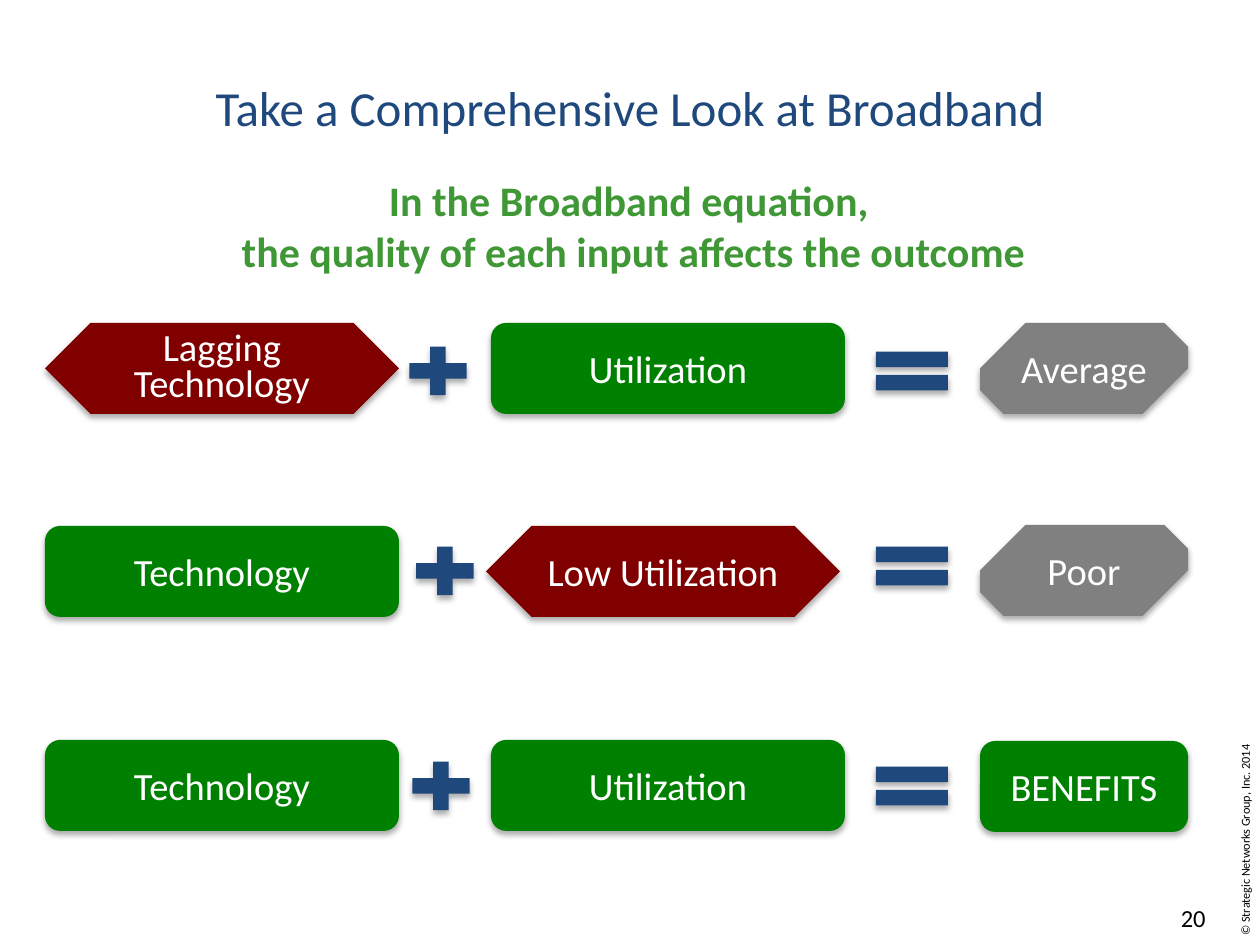
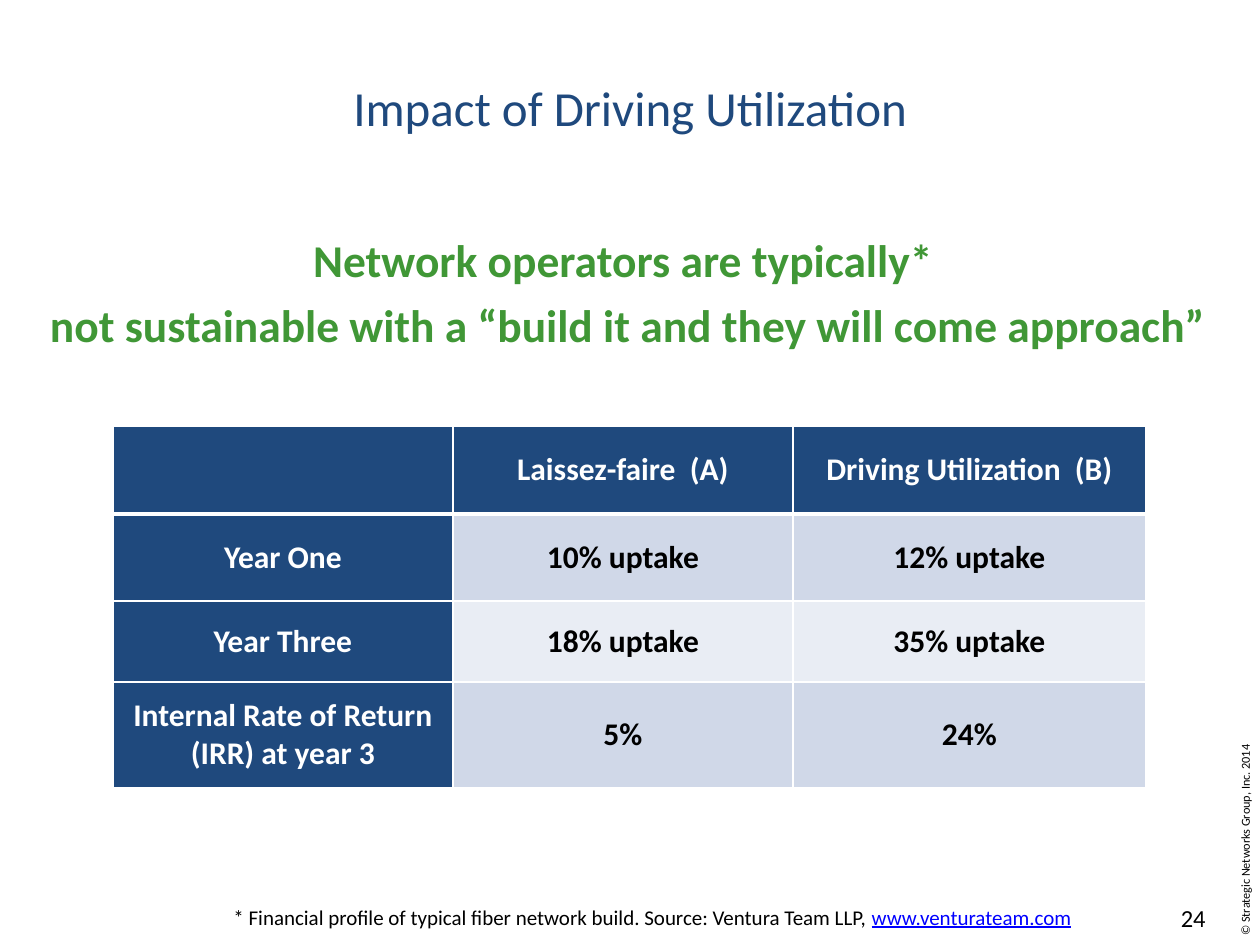
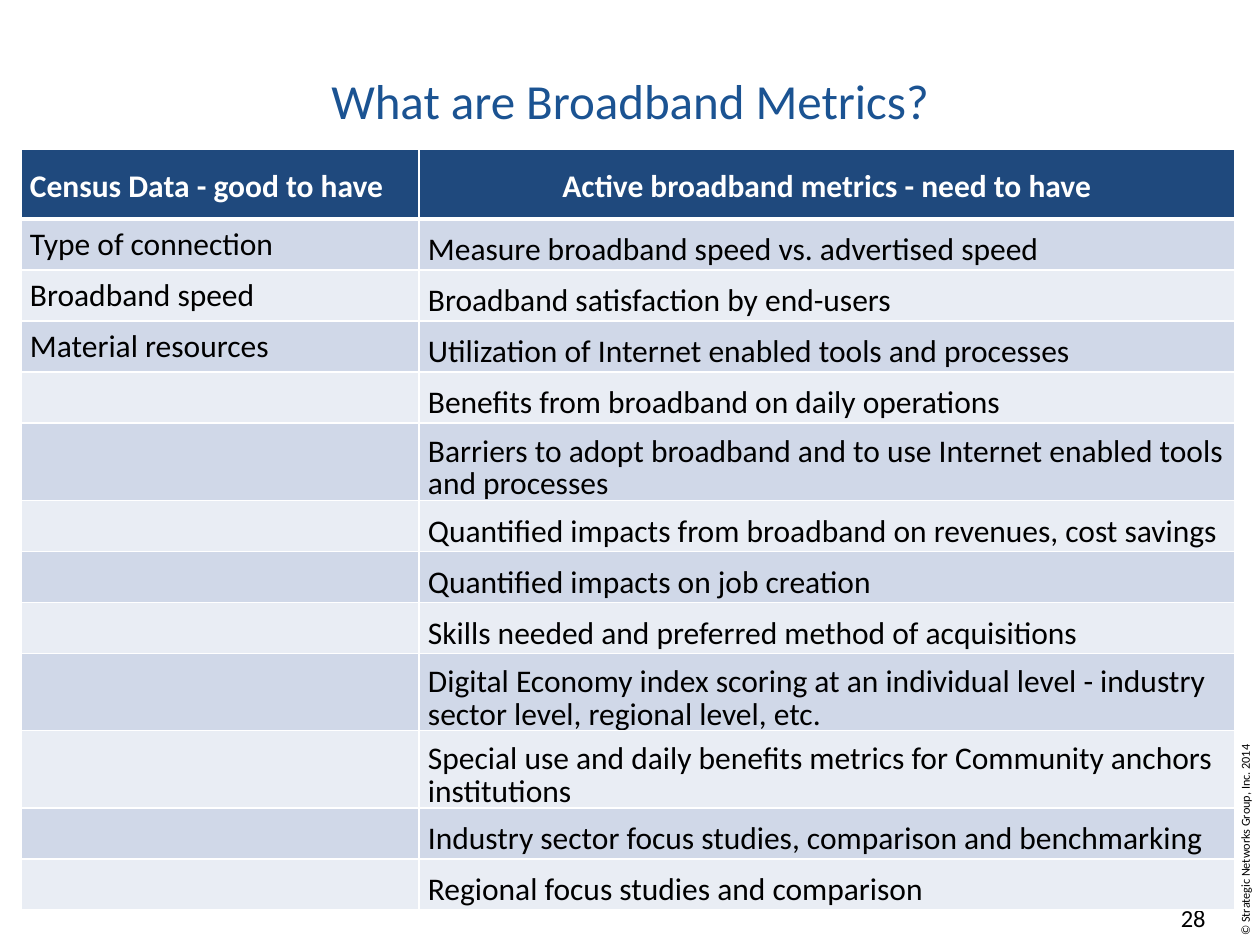
from dataclasses import dataclass
from typing import Callable, Optional

import pptx
import pptx.dml.color
import pptx.enum.shapes
import pptx.enum.text
import pptx.oxml
import pptx.oxml.ns
import pptx.util

RGBColor = pptx.dml.color.RGBColor
MSO_SHAPE = pptx.enum.shapes.MSO_SHAPE
PP_ALIGN = pptx.enum.text.PP_ALIGN
MSO_ANCHOR = pptx.enum.text.MSO_ANCHOR
Pt = pptx.util.Pt

PX_PER_INCH = 126
FONT = "Calibri"
COPYRIGHT = "© Strategic Networks Group, Inc. 2014"

NAVY = RGBColor(0x1F, 0x49, 0x7D)
BLUE = RGBColor(0x1B, 0x53, 0x92)
LEAF = RGBColor(0x40, 0x97, 0x36)
GREEN = RGBColor(0x00, 0x80, 0x00)
MAROON = RGBColor(0x80, 0x00, 0x00)
GRAY = RGBColor(0x80, 0x80, 0x80)
LINK = RGBColor(0x00, 0x00, 0xFF)
BLACK = RGBColor(0x00, 0x00, 0x00)
WHITE = RGBColor(0xFF, 0xFF, 0xFF)
BANDS = (RGBColor(0xD0, 0xD8, 0xE8), RGBColor(0xE9, 0xED, 0xF4))


@dataclass(frozen=True)
class Run:
    text: str
    size: int
    color: RGBColor = BLACK
    bold: bool = False
    underline: bool = False


@dataclass(frozen=True)
class Para:
    runs: tuple[Run, ...]
    align: PP_ALIGN = PP_ALIGN.LEFT
    spacing: Optional[float] = None
    after: int = 0


@dataclass(frozen=True)
class Kind:
    """Look of one sort of equation block."""
    preset: MSO_SHAPE
    fill: RGBColor
    width: int
    height: int = 91
    adjustments: tuple[float, ...] = ()


@dataclass(frozen=True)
class Block:
    kind: Kind
    left: int
    top: int
    text: str = ""
    spacing: Optional[float] = None


@dataclass(frozen=True)
class CellStyle:
    fill: RGBColor
    color: RGBColor = BLACK
    bold: bool = False
    align: PP_ALIGN = PP_ALIGN.LEFT
    spacing: Optional[float] = None
    after: int = 0
    top_margin: int = 0


GOOD = Kind(MSO_SHAPE.ROUNDED_RECTANGLE, GREEN, 354)
WEAK = Kind(MSO_SHAPE.SNIP_2_DIAG_RECTANGLE, MAROON, 354, adjustments=(0.5, 0.5))
MIXED = Kind(MSO_SHAPE.SNIP_2_DIAG_RECTANGLE, GRAY, 208, adjustments=(0.5, 0.26))
BENEFIT = Kind(MSO_SHAPE.ROUNDED_RECTANGLE, GREEN, 208)
PLUS = Kind(MSO_SHAPE.MATH_PLUS, NAVY, 78, 66)
EQUAL = Kind(MSO_SHAPE.MATH_EQUAL, NAVY, 98, 66)

TECH_X, USE_X, EQUAL_X, RESULT_X = 45, 491, 863, 980

EQUATION = (
    Block(WEAK, TECH_X, 323, "Lagging Technology", 0.8),
    Block(PLUS, 399, 338),
    Block(GOOD, USE_X, 323, "Utilization"),
    Block(EQUAL, EQUAL_X, 338),
    Block(MIXED, RESULT_X, 323, "Average"),
    Block(GOOD, TECH_X, 526, "Technology"),
    Block(PLUS, 406, 538),
    Block(WEAK, 486, 526, "Low Utilization"),
    Block(EQUAL, EQUAL_X, 533),
    Block(MIXED, RESULT_X, 525, "Poor"),
    Block(GOOD, TECH_X, 740, "Technology"),
    Block(PLUS, 402, 753),
    Block(GOOD, USE_X, 740, "Utilization"),
    Block(EQUAL, EQUAL_X, 753),
    Block(BENEFIT, RESULT_X, 741, "BENEFITS"),
)

UPTAKE = (
    ("", "Laissez-faire  (A)", "Driving Utilization  (B)"),
    ("Year One", "10% uptake", "12% uptake"),
    ("Year Three", "18% uptake", "35% uptake"),
    ("Internal Rate of Return (IRR) at year 3", "5%", "24%"),
)

METRICS = (
    ("Census Data - good to have", "Active broadband metrics - need to have"),
    ("Type of connection", "Measure broadband speed vs. advertised speed"),
    ("Broadband speed", "Broadband satisfaction by end-users"),
    ("Material resources", "Utilization of Internet enabled tools and processes"),
    ("", "Benefits from broadband on daily operations"),
    ("", "Barriers to adopt broadband and to use Internet enabled tools and processes"),
    ("", "Quantified impacts from broadband on revenues, cost savings"),
    ("", "Quantified impacts on job creation"),
    ("", "Skills needed and preferred method of acquisitions"),
    ("", "Digital Economy index scoring at an individual level - industry sector level, "
         "regional level, etc."),
    ("", "Special use and daily benefits metrics for Community anchors institutions"),
    ("", "Industry sector focus studies, comparison and benchmarking"),
    ("", "Regional focus studies and comparison"),
)


def px(n: int) -> int:
    return pptx.util.Emu(round(n * 914400 / PX_PER_INCH))


def write(tf, paras: tuple[Para, ...]) -> None:
    for i, para in enumerate(paras):
        p = tf.paragraphs[0] if i == 0 else tf.add_paragraph()
        p.alignment = para.align
        if para.spacing:
            p.line_spacing = para.spacing
        p.space_after = Pt(para.after)
        for run in para.runs:
            r = p.add_run()
            r.text = run.text
            r.font.name = FONT
            r.font.size = Pt(run.size)
            r.font.bold = run.bold
            r.font.underline = run.underline
            r.font.color.rgb = run.color


def add_text(slide, left: int, top: int, width: int, height: int, *paras: Para):
    sp = slide.shapes.add_textbox(px(left), px(top), px(width), px(height))
    sp.text_frame.word_wrap = True
    write(sp.text_frame, paras)
    return sp


def add_slide(prs, title: str, number: int, color: RGBColor = NAVY,
              spacing: Optional[float] = None):
    """Add a slide with the shared title, copyright line and page number."""
    slide = prs.slides.add_slide(prs.slide_layouts[5])
    sp = slide.shapes.title
    sp.left, sp.top, sp.width, sp.height = px(63), px(59), px(1134), px(95)
    sp.text_frame.vertical_anchor = MSO_ANCHOR.MIDDLE
    write(sp.text_frame, (Para((Run(title, 28, color),), PP_ALIGN.CENTER, spacing),))

    sp = add_text(slide, 1133, 815, 224, 33, Para((Run(COPYRIGHT, 7),)))
    sp.rotation = 270
    tf = sp.text_frame
    tf.word_wrap = False
    tf.vertical_anchor = MSO_ANCHOR.MIDDLE
    tf.margin_left = px(8)

    add_text(slide, 924, 897, 294, 50, Para((Run(str(number), 14),), PP_ALIGN.RIGHT))
    return slide


def add_shadow(sp) -> None:
    sp.shadow.inherit = False
    effects = sp._element.spPr.find(pptx.oxml.ns.qn("a:effectLst"))
    effects.append(pptx.oxml.parse_xml(
        f'<a:outerShdw {pptx.oxml.ns.nsdecls("a")} blurRad="{Pt(3.5)}" dist="{Pt(2.2)}" '
        'dir="5400000" rotWithShape="0"><a:srgbClr val="000000">'
        '<a:alpha val="32000"/></a:srgbClr></a:outerShdw>'))


def add_block(slide, block: Block) -> None:
    kind = block.kind
    sp = slide.shapes.add_shape(kind.preset, px(block.left), px(block.top),
                                px(kind.width), px(kind.height))
    for i, value in enumerate(kind.adjustments):
        sp.adjustments[i] = value
    sp.fill.solid()
    sp.fill.fore_color.rgb = kind.fill
    sp.line.fill.background()
    add_shadow(sp)
    if block.text:
        sp.text_frame.vertical_anchor = MSO_ANCHOR.MIDDLE
        write(sp.text_frame, (Para((Run(block.text, 22, WHITE),), PP_ALIGN.CENTER,
                                   block.spacing),))


def set_borders(cell, top: int, bottom: int) -> None:
    """Give a cell white borders; top and bottom are widths in points."""
    tc_pr = cell._tc.get_or_add_tcPr()
    widths = {"lnL": 1, "lnR": 1, "lnT": top, "lnB": bottom}
    for i, (tag, width) in enumerate(widths.items()):
        tc_pr.insert(i, pptx.oxml.parse_xml(
            f'<a:{tag} {pptx.oxml.ns.nsdecls("a")} w="{Pt(width)}"><a:solidFill>'
            f'<a:srgbClr val="{WHITE}"/></a:solidFill></a:{tag}>'))


def add_grid(slide, left: int, top: int, widths: tuple[int, ...], heights: tuple[int, ...],
             rows: tuple[tuple[str, ...], ...],
             style_of: Callable[[int, int], CellStyle]) -> None:
    table = slide.shapes.add_table(len(heights), len(widths), px(left), px(top),
                                   px(sum(widths)), px(sum(heights))).table
    for column, width in zip(table.columns, widths):
        column.width = px(width)
    for i, (row, height, texts) in enumerate(zip(table.rows, heights, rows)):
        row.height = px(height)
        for j, (cell, text) in enumerate(zip(row.cells, texts)):
            style = style_of(i, j)
            cell.fill.solid()
            cell.fill.fore_color.rgb = style.fill
            cell.vertical_anchor = MSO_ANCHOR.MIDDLE
            cell.margin_left = cell.margin_right = px(9)
            cell.margin_top, cell.margin_bottom = px(style.top_margin), 0
            set_borders(cell, 3 if i == 1 else 1, 3 if i == 0 else 1)
            if text:
                run = Run(text, 18, style.color, style.bold)
                write(cell.text_frame, (Para((run,), style.align, style.spacing,
                                             style.after),))


def uptake_style(row: int, col: int) -> CellStyle:
    if row == 0 or col == 0:
        return CellStyle(NAVY, WHITE, True, PP_ALIGN.CENTER)
    return CellStyle(BANDS[(row - 1) % 2], bold=True, align=PP_ALIGN.CENTER)


def metrics_style(row: int, col: int) -> CellStyle:
    if row == 0:
        align = PP_ALIGN.CENTER if col else PP_ALIGN.LEFT
        return CellStyle(NAVY, WHITE, True, align, 1.15, 10)
    band = BANDS[(row - 1) % 2]
    return CellStyle(band, spacing=0.85, top_margin=13) if col else CellStyle(band)


def heading(text: str, size: int, spacing: Optional[float] = None, after: int = 0) -> Para:
    return Para((Run(text, size, LEAF, True),), PP_ALIGN.CENTER, spacing, after)


def equation_slide(prs) -> None:
    slide = add_slide(prs, "Take a Comprehensive Look at Broadband", 20)
    add_text(slide, 159, 176, 949, 123,
             heading("In the Broadband equation, ", 24, 0.85),
             heading("the quality of each input affects the outcome", 24))
    for block in EQUATION:
        add_block(slide, block)


def uptake_slide(prs) -> None:
    slide = add_slide(prs, "Impact of Driving Utilization", 24)
    add_text(slide, 25, 226, 1207, 140,
             heading("Network operators are typically* ", 26, after=6),
             heading("not sustainable with a “build it and they will come approach”", 26,
                     after=6))
    source = "* Financial profile of typical fiber network build. Source: Ventura Team LLP, "
    add_text(slide, 221, 898, 900, 38,
             Para((Run(source, 12), Run("www.venturateam.com", 12, LINK, underline=True))))
    add_grid(slide, 113, 426, (340, 340, 353), (88, 87, 81, 106), UPTAKE, uptake_style)


def metrics_slide(prs) -> None:
    slide = add_slide(prs, "What are Broadband Metrics?", 28, BLUE, 0.75)
    heights = (70,) + (51,) * (len(METRICS) - 1)
    add_grid(slide, 21, 149, (398, 816), heights, METRICS, metrics_style)


def main() -> None:
    prs = pptx.Presentation()
    prs.slide_width, prs.slide_height = px(1260), px(945)
    equation_slide(prs)
    uptake_slide(prs)
    metrics_slide(prs)
    prs.save("out.pptx")


if __name__ == "__main__":
    main()
